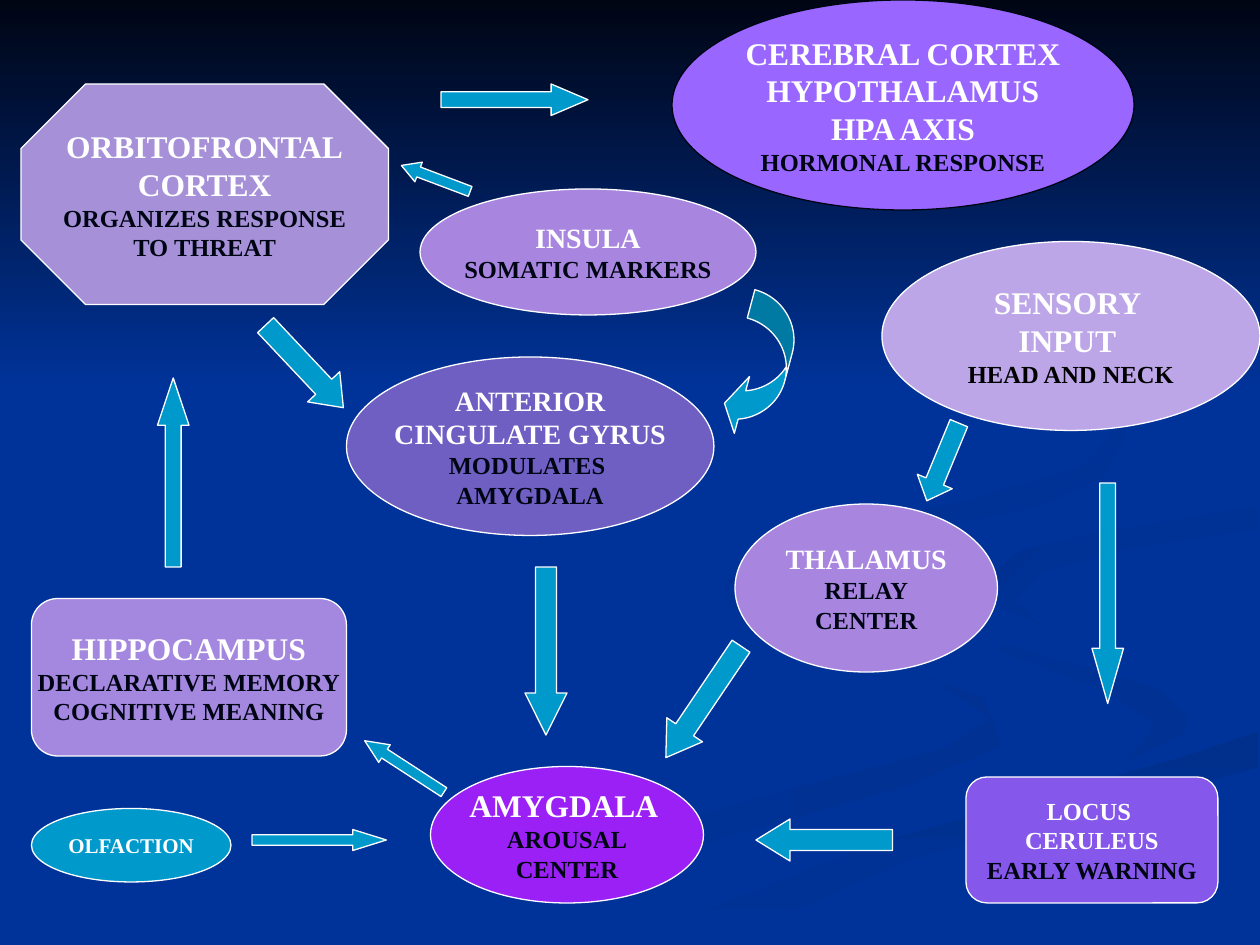
from pptx import Presentation
from pptx.dml.color import RGBColor
from pptx.enum.shapes import MSO_SHAPE
from pptx.enum.text import MSO_ANCHOR, PP_ALIGN
from pptx.util import Pt

PX = 7620
ELLIPSE = MSO_SHAPE.OVAL
ROUNDED = MSO_SHAPE.ROUNDED_RECTANGLE
OCTAGON = MSO_SHAPE.OCTAGON
RECTANGLE = MSO_SHAPE.RECTANGLE
UP = MSO_SHAPE.UP_ARROW
DOWN = MSO_SHAPE.DOWN_ARROW
LEFT = MSO_SHAPE.LEFT_ARROW
RIGHT = MSO_SHAPE.RIGHT_ARROW
CURVED_LEFT = MSO_SHAPE.CURVED_LEFT_ARROW
MIDDLE = MSO_ANCHOR.MIDDLE
CENTER = PP_ALIGN.CENTER

FONT = "Times New Roman"
WHITE = "FFFFFF"
BLACK = "000000"
INK = "000514"
BLUE = "003399"
TEAL = "0099CC"


def color(value):
    return RGBColor.from_string(value)


class Diagram:
    def __init__(self, slide):
        self.slide = slide
        slide.background.fill.solid()
        slide.background.fill.fore_color.rgb = color(BLUE)

    def add(self, kind, box):
        shape = self.slide.shapes.add_shape(kind, *[value * PX for value in box])
        shape.shadow.inherit = False
        return shape

    def shade(self, shape, start, end, angle):
        shape.line.fill.background()
        shape.fill.gradient()
        shape.fill.gradient_angle = (360 - angle) % 360
        for stop, value in zip(shape.fill.gradient_stops, (start, end)):
            stop.color.rgb = color(value)

    def swirl(self, start, end, angle, points):
        builder = self.slide.shapes.build_freeform(*points[0], scale=PX)
        builder.add_line_segments(points[1:], close=True)
        shape = builder.convert_to_shape()
        shape.shadow.inherit = False
        self.shade(shape, start, end, angle)

    def band(self, box, start, end):
        self.shade(self.add(RECTANGLE, box), start, end, 90)

    def solid(self, kind, box, fill, line=WHITE):
        shape = self.add(kind, box)
        shape.fill.solid()
        shape.fill.fore_color.rgb = color(fill)
        shape.line.color.rgb = color(line)
        shape.line.width = Pt(0.75)
        return shape

    def region(self, kind, box, fill, title, size, detail="", ink=INK, line=WHITE):
        frame = self.solid(kind, box, fill, line).text_frame
        frame.word_wrap = False
        frame.vertical_anchor = MIDDLE
        titles = title.split("\n")
        details = detail.split("\n") if detail else []
        frame.text = "\n".join(titles + details)
        for index, paragraph in enumerate(frame.paragraphs):
            is_title = index < len(titles)
            paragraph.alignment = CENTER
            for run in paragraph.runs:
                run.font.name = FONT
                run.font.bold = True
                run.font.size = Pt(size if is_title else 14)
                run.font.color.rgb = color(WHITE if is_title else ink)

    def arrow(self, kind, box, head, rotation=0):
        shape = self.solid(kind, box, TEAL)
        shape.adjustments[1] = head
        shape.rotation = rotation
        return shape


SWIRLS = [
    (BLUE, "003193", 0, [
        (793, 616), (704, 577), (690, 551), (691, 576), (757, 606), (889, 647),
        (943, 684), (899, 713), (695, 767), (500, 828), (360, 899), (433, 899),
        (599, 824), (865, 748), (954, 710), (937, 664)]),
    (BLUE, "003193", 45, [
        (1132, 684), (1103, 656), (950, 611), (869, 557), (895, 600),
        (1056, 659), (1100, 691), (1073, 726), (1129, 697)]),
    ("002F8C", BLUE, 90, [
        (604, 899), (685, 899), (866, 818), (1198, 731), (1198, 697),
        (1123, 722), (835, 803), (683, 863)]),
    ("003091", BLUE, 45, [
        (937, 552), (956, 580), (991, 595), (966, 571), (994, 544),
        (1075, 522), (1198, 504), (1198, 482), (1038, 509), (972, 524)]),
    ("002F8E", BLUE, 45, [
        (820, 516), (990, 482), (1051, 454), (1073, 413), (1037, 349),
        (914, 280), (1051, 367), (1067, 402), (1033, 444), (916, 478),
        (738, 515), (692, 554), (747, 600), (712, 564), (749, 533)]),
]


def main():
    presentation = Presentation()
    presentation.slide_width = 1200 * PX
    presentation.slide_height = 900 * PX
    diagram = Diagram(presentation.slides.add_slide(presentation.slide_layouts[6]))

    for swirl in SWIRLS:
        diagram.swirl(*swirl)
    diagram.band((0, 0, 1200, 370), INK, BLUE)

    diagram.region(ELLIPSE, (840, 230, 360, 180), "BCA6E8",
                   "SENSORY \nINPUT ", 18, "HEAD AND NECK", ink=BLACK)
    diagram.region(ELLIPSE, (410, 730, 260, 130), "9A20F6",
                   "AMYGDALA ", 18, "AROUSAL\nCENTER")
    diagram.region(ELLIPSE, (330, 340, 350, 170), "705FC3",
                   "ANTERIOR\nCINGULATE GYRUS", 16, "MODULATES \nAMYGDALA")
    diagram.region(ELLIPSE, (640, 0, 440, 200), "9966FF",
                   "CEREBRAL CORTEX\nHYPOTHALAMUS\nHPA AXIS", 18,
                   "HORMONAL RESPONSE", line=INK)
    diagram.region(ROUNDED, (30, 570, 300, 150), "A487DF", "HIPPOCAMPUS", 18,
                   "DECLARATIVE MEMORY\nCOGNITIVE MEANING")
    diagram.region(OCTAGON, (20, 80, 350, 210), "A691D9",
                   "ORBITOFRONTAL\nCORTEX", 18, "ORGANIZES RESPONSE\nTO THREAT")
    diagram.region(ROUNDED, (920, 740, 240, 120), "8557EB",
                   "LOCUS \nCERULEUS", 14, "EARLY WARNING")
    diagram.region(ELLIPSE, (700, 480, 250, 160), "A886E0",
                   "THALAMUS", 16, "RELAY\nCENTER")
    diagram.region(ELLIPSE, (400, 180, 320, 120), "A886E0",
                   "INSULA", 16, "SOMATIC MARKERS")
    diagram.region(ELLIPSE, (30, 770, 190, 70), TEAL, "OLFACTION", 12)

    diagram.arrow(UP, (150, 360, 30, 180), 1.5)
    diagram.arrow(RIGHT, (420, 80, 140, 30), 1.17)
    diagram.arrow(DOWN, (1040, 460, 30, 210), 1.75)
    diagram.arrow(LEFT, (720, 780, 130, 40), 0.81)
    diagram.arrow(LEFT, (380, 160, 70, 20), 0.88, 20.7)
    diagram.arrow(LEFT, (340, 720, 90, 20), 1.13, 33)
    diagram.arrow(RIGHT, (240, 790, 128, 20), 1.6)
    diagram.arrow(DOWN, (500, 540, 40, 160), 1)
    bend = diagram.arrow(CURVED_LEFT, (700, 280, 50, 140), 1.12, 15)
    bend.adjustments[0] = 0.56
    bend.adjustments[2] = 0.33
    diagram.arrow(LEFT, (606, 648, 128, 41), 0.78, 304)
    diagram.arrow(DOWN, (880, 400, 36, 80), 0.55, 22.5)
    diagram.arrow(RIGHT, (236, 328, 108, 42), 0.65, 46.7)

    presentation.save("out.pptx")


if __name__ == "__main__":
    main()
